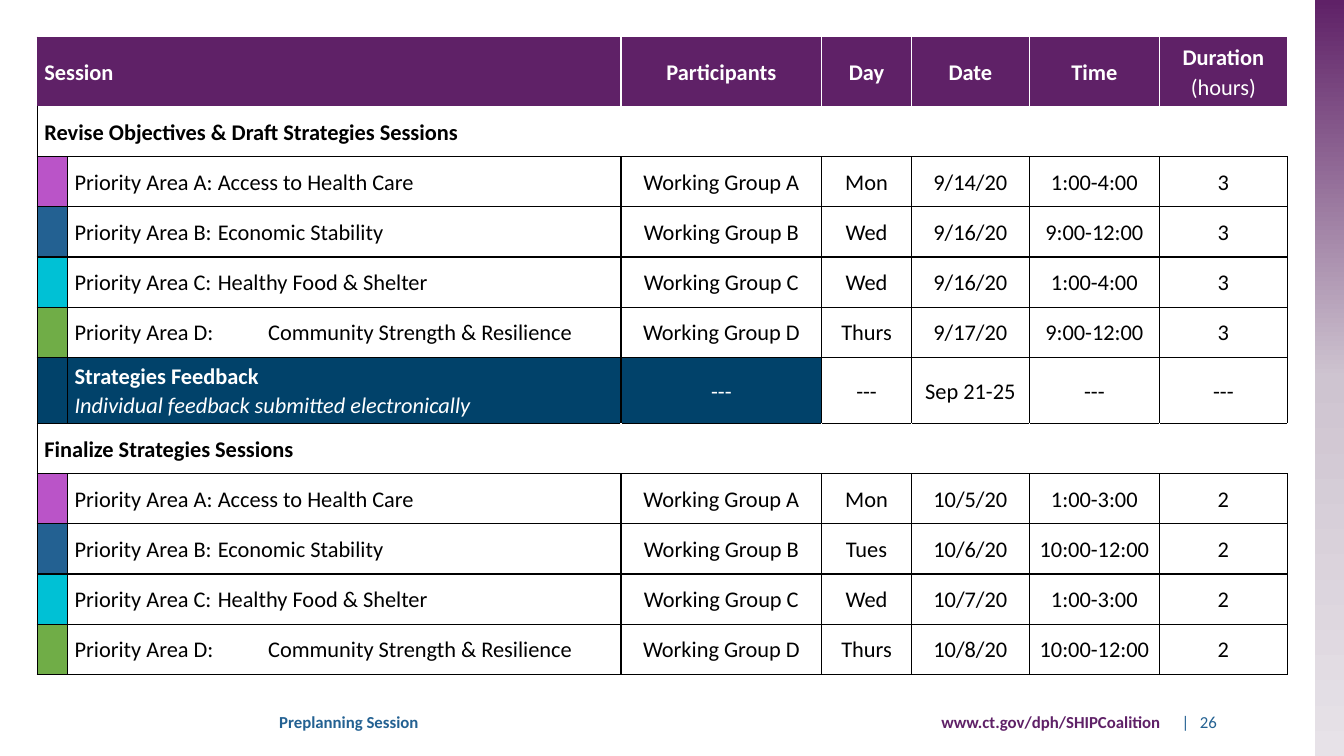
from copy import deepcopy

from lxml.etree import SubElement
from pptx import Presentation
from pptx.dml.color import RGBColor
from pptx.enum.shapes import MSO_SHAPE
from pptx.enum.text import MSO_ANCHOR, PP_ALIGN
from pptx.oxml.ns import qn
from pptx.util import Inches, Pt

COLORS = {
    "purple": "5F2167", "mauve": "CEC4D0", "pale": "E7E2E8",
    "orchid": "BA54C8", "blue": "236192", "cyan": "00C1D5",
    "green": "70AD47", "navy": "01426A", "white": "FFFFFF", "black": "000000",
}
FONT = "Calibri"
COLUMN_WIDTHS = [0.3, 5.49, 1.99, 0.89, 1.17, 1.29, 1.27]
ROW_HEIGHTS = [0.69] + [0.5] * 5 + [0.66] + [0.5] * 5
HEADINGS = ["Participants", "Day", "Date", "Time", "Duration\n(hours)"]
AREAS = [
    ("A", "Access to Health Care", "orchid"),
    ("B", "Economic Stability", "blue"),
    ("C", "Healthy Food & Shelter", "cyan"),
    ("D", "Community Strength & Resilience", "green"),
]
DRAFT_TIMES = [
    ("Mon", "9/14/20", "1:00-4:00", "3"),
    ("Wed", "9/16/20", "9:00-12:00", "3"),
    ("Wed", "9/16/20", "1:00-4:00", "3"),
    ("Thurs", "9/17/20", "9:00-12:00", "3"),
]
FINAL_TIMES = [
    ("Mon", "10/5/20", "1:00-3:00", "2"),
    ("Tues", "10/6/20", "10:00-12:00", "2"),
    ("Wed", "10/7/20", "1:00-3:00", "2"),
    ("Thurs", "10/8/20", "10:00-12:00", "2"),
]


def rgb(name):
    """Return the named colour."""
    return RGBColor.from_string(COLORS[name])


def style_paragraph(paragraph, size, color, bold=False, italic=False):
    """Set the font of a whole paragraph."""
    font = paragraph.font
    font.name, font.size, font.bold, font.italic = FONT, Pt(size), bold, italic
    font.color.rgb = rgb(color)


def set_borders(cell, colors):
    """Draw the left, right, top and bottom borders of a cell."""
    properties = cell._tc.get_or_add_tcPr()
    for side, color in zip("LRTB", colors):
        line = SubElement(properties, qn(f"a:ln{side}"), w=str(Pt(1)))
        fill = SubElement(line, qn("a:solidFill"))
        SubElement(fill, qn("a:srgbClr"), val=COLORS[color])


def write_cell(cell, text, color="black", styles=("",), centered=True):
    """Write the lines of a cell, each in its own style."""
    cell.vertical_anchor = MSO_ANCHOR.MIDDLE
    cell.margin_left = cell.margin_right = Inches(0.07)
    cell.margin_top = cell.margin_bottom = 0
    cell.text = text
    for paragraph, style in zip(cell.text_frame.paragraphs, styles):
        paragraph.line_spacing = 1.07
        paragraph.alignment = PP_ALIGN.CENTER if centered else PP_ALIGN.LEFT
        style_paragraph(paragraph, 16, color, style == "bold", style == "italic")


def prepare_row(cells, borders, fills):
    """Set borders and fills along a row."""
    for cell, sides, fill in zip(cells, borders, fills):
        set_borders(cell, sides)
        cell.fill.solid()
        cell.fill.fore_color.rgb = rgb(fill)


def add_heading_row(cells):
    """Fill the purple heading row."""
    borders = [("white", "white", "purple", "white")] * 7
    borders[0] = ("purple", "white", "purple", "white")
    prepare_row(cells, borders, ["purple"] * 7)
    cells[0].merge(cells[1])
    write_cell(cells[0], "Session", "white", ["bold"], centered=False)
    for cell, heading in zip(cells[2:], HEADINGS):
        write_cell(cell, heading, "white", ["bold", ""])


def add_section_row(cells, title, top):
    """Fill a row that names a group of sessions."""
    borders = [("white", "white", top, "black")] * 7
    borders[0] = ("black", "white", top, "black")
    prepare_row(cells, borders, ["white"] * 7)
    cells[0].merge(cells[1])
    write_cell(cells[0], title, styles=["bold"], centered=False)


def add_area_row(cells, area, times):
    """Fill the row of one priority area."""
    letter, topic, color = area
    prepare_row(cells, [["black"] * 4] * 7, [color] + ["white"] * 6)
    write_cell(cells[1], f"Priority Area {letter}: \t{topic}", centered=False)
    properties = cells[1].text_frame.paragraphs[0]._p.get_or_add_pPr()
    properties.set("marL", str(Inches(0.92)))
    properties.set("indent", str(Inches(-0.94)))
    for cell, text in zip(cells[2:], (f"Working Group {letter}", *times)):
        write_cell(cell, text)


def add_feedback_row(cells):
    """Fill the row on written feedback."""
    prepare_row(cells, [["black"] * 4] * 7, ["navy"] * 3 + ["white"] * 4)
    text = "Strategies Feedback\nIndividual feedback submitted electronically"
    write_cell(cells[1], text, "white", ["bold", "italic"], centered=False)
    write_cell(cells[2], "---", "white")
    for cell, text in zip(cells[3:], ["---", "Sep 21-25", "---", "---"]):
        write_cell(cell, text)


def add_schedule(slide, left, top, width, height):
    """Place the session table in the given box."""
    frame = slide.shapes.add_table(
        len(ROW_HEIGHTS), len(COLUMN_WIDTHS), left, top, width, height)
    table = frame.table
    table.first_row = table.horz_banding = False
    for column, share in zip(table.columns, COLUMN_WIDTHS):
        column.width = int(width * share / sum(COLUMN_WIDTHS))
    for row, share in zip(table.rows, ROW_HEIGHTS):
        row.height = int(height * share / sum(ROW_HEIGHTS))
    rows = iter([list(row.cells) for row in table.rows])
    add_heading_row(next(rows))
    add_section_row(next(rows), "Revise Objectives & Draft Strategies Sessions", "white")
    for area, times in zip(AREAS, DRAFT_TIMES):
        add_area_row(next(rows), area, times)
    add_feedback_row(next(rows))
    add_section_row(next(rows), "Finalize Strategies Sessions", "black")
    for area, times in zip(AREAS, FINAL_TIMES):
        add_area_row(next(rows), area, times)


def add_side_band(slide, left, top, width, height):
    """Place the gradient band in the given box."""
    band = slide.shapes.add_shape(MSO_SHAPE.RECTANGLE, left, top, width, height)
    band.shadow.inherit = False
    band.line.fill.background()
    band.fill.gradient()
    band.fill.gradient_angle = 270
    stop_list = band._element.spPr.find(".//" + qn("a:gsLst"))
    stop_list.append(deepcopy(stop_list[-1]))
    names = ["purple", "mauve", "pale"]
    for stop, position, name in zip(band.fill.gradient_stops, [0, 0.5, 1], names):
        stop.position = position
        stop.color.rgb = rgb(name)


def add_footer(slide, left, top, width, height):
    """Place the footer texts along the given box."""
    items = [
        ("Preplanning Session", 0, 6.07, "blue", True, PP_ALIGN.LEFT),
        ("www.ct.gov/dph/SHIPCoalition", 6.18, 2.76, "purple", True, PP_ALIGN.RIGHT),
        ("|\t26", 9.05, 0.71, "blue", False, PP_ALIGN.LEFT),
    ]
    unit = width / 9.76
    for text, offset, span, color, bold, alignment in items:
        box = slide.shapes.add_textbox(
            int(left + offset * unit), top, int(span * unit), height)
        frame = box.text_frame
        frame.word_wrap = True
        frame.vertical_anchor = MSO_ANCHOR.MIDDLE
        frame.text = text
        paragraph = frame.paragraphs[0]
        paragraph.alignment = alignment
        if "\t" in text:
            frame.margin_left = 0
            tabs = SubElement(paragraph._p.get_or_add_pPr(), qn("a:tabLst"))
            SubElement(tabs, qn("a:tab"), pos=str(Inches(0.18)), algn="l")
        style_paragraph(paragraph, 12, color, bold)


def main():
    """Build and save the schedule slide."""
    presentation = Presentation()
    presentation.slide_width = Inches(13.33)
    presentation.slide_height = Inches(7.5)
    slide = presentation.slides.add_slide(presentation.slide_layouts[6])
    add_side_band(slide, Inches(13.04), 0, Inches(0.29), Inches(7.5))
    add_schedule(slide, Inches(0.37), Inches(0.37), Inches(12.4), Inches(6.32))
    add_footer(slide, Inches(2.67), Inches(6.96), Inches(9.76), Inches(0.41))
    presentation.save("out.pptx")


if __name__ == "__main__":
    main()
